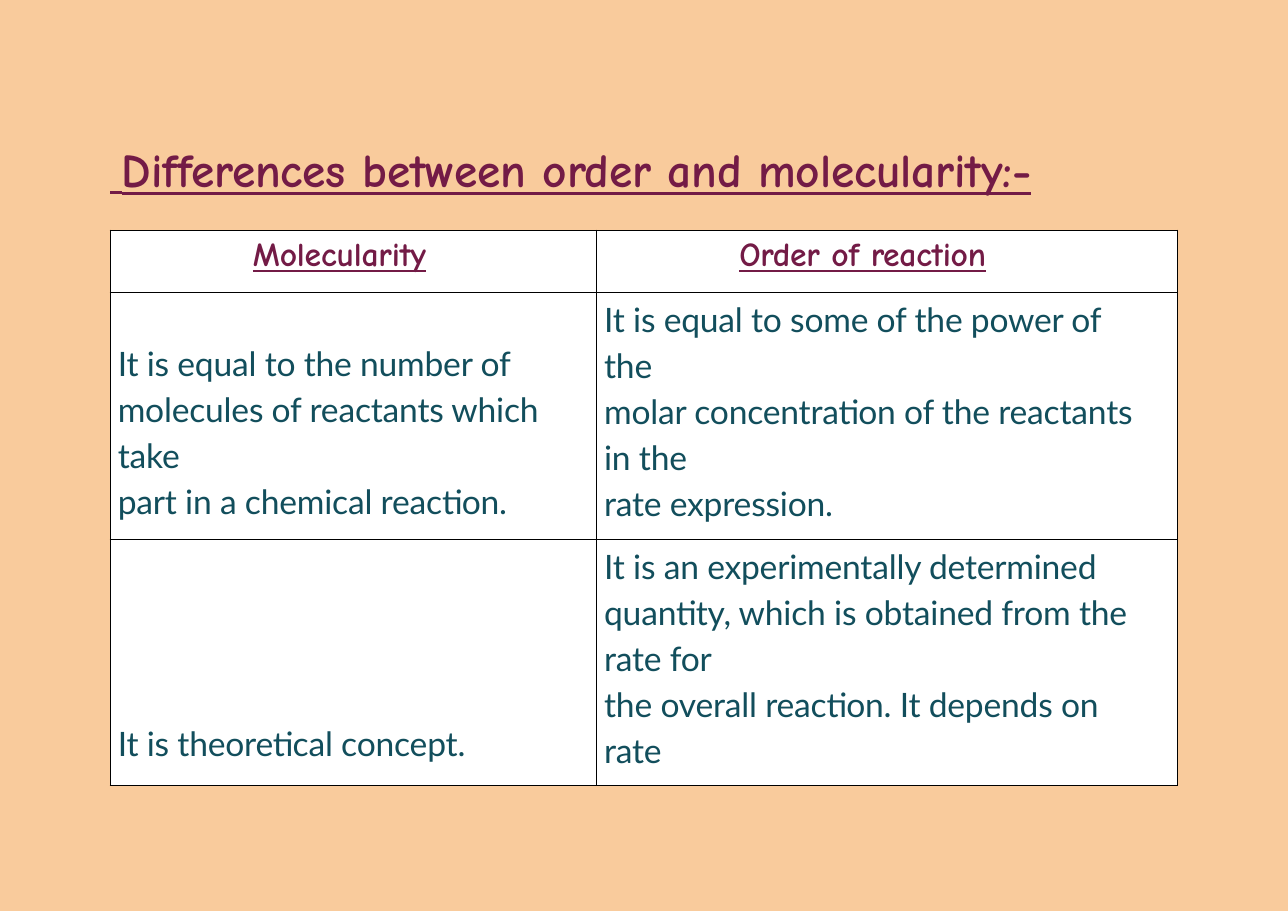
from lxml import etree
from pptx import Presentation
from pptx.dml.color import RGBColor
from pptx.enum.text import MSO_ANCHOR, MSO_AUTO_SIZE, PP_ALIGN
from pptx.oxml.ns import qn
from pptx.util import Cm, Pt

LEFT, TOP, FIXED = PP_ALIGN.LEFT, MSO_ANCHOR.TOP, MSO_AUTO_SIZE.NONE
COLORS = {"back": "F9CB9C", "head": "731B46", "body": "124E5C",
          "cell": "FFFFFF", "line": "000000"}
FORMATS = {
    "title": {"name": "Comic Neue", "size": Pt(31), "bold": True, "underline": True},
    "head": {"name": "Comic Neue", "size": Pt(22), "bold": True, "underline": True},
    "body": {"name": "Lato", "size": Pt(22), "bold": False, "underline": False},
}


class Deck:
    def __init__(self, width, height):
        self.prs = Presentation()
        self.prs.slide_width, self.prs.slide_height = Cm(width), Cm(height)
        self.slide = self.prs.slides.add_slide(self.prs.slide_layouts[5])
        self.paint(self.slide.background, "back")

    def paint(self, item, color):
        item.fill.solid()
        item.fill.fore_color.rgb = RGBColor.from_string(COLORS[color])

    def run(self, para, text, style, color, **extra):
        run = para.add_run()
        run.text = text
        for key, value in {**FORMATS[style], **extra}.items():
            setattr(run.font, key, value)
        run.font.color.rgb = RGBColor.from_string(COLORS[color])
        run.font._element.set("spc", "-10")

    def title(self, box, text):
        shape = self.slide.shapes.title
        for key, value in zip(("left", "top", "width", "height"), box):
            setattr(shape, key, Cm(value))
        frame = shape.text_frame
        values = {"margin_left": Cm(0.03), "margin_top": Cm(0.03), "margin_right": 0,
                  "margin_bottom": 0, "vertical_anchor": TOP,
                  "word_wrap": True, "auto_size": FIXED}
        for key, value in values.items():
            setattr(frame, key, value)
        para = frame.paragraphs[0]
        para.alignment = LEFT
        # The underline starts one space before the words
        self.run(para, " ", "title", "head", name="Times New Roman", bold=False)
        self.run(para, text, "title", "head")

    def border(self, cell):
        props = cell._tc.get_or_add_tcPr()
        for spot, side in enumerate(("lnL", "lnR", "lnT", "lnB")):
            line = etree.Element(qn(f"a:{side}"), w=str(Pt(0.75)))
            fill = etree.SubElement(line, qn("a:solidFill"))
            etree.SubElement(fill, qn("a:srgbClr"), val=COLORS["line"])
            props.insert(spot, line)

    def cell(self, cell, lines, style, margins, space):
        for side, value in zip(("left", "top", "right", "bottom"), margins):
            setattr(cell, f"margin_{side}", Cm(value))
        cell.vertical_anchor = TOP
        self.paint(cell, "cell")
        self.border(cell)
        frame = cell.text_frame
        for spot, text in enumerate(lines):
            para = frame.add_paragraph() if spot else frame.paragraphs[0]
            para.alignment, para.line_spacing = LEFT, space
            self.run(para, text, style, style)

    def table(self, left, top, widths, heights, rows, drops):
        table = self.slide.shapes.add_table(
            len(heights), len(widths), Cm(left), Cm(top),
            Cm(sum(widths)), Cm(sum(heights))).table
        for parts, key, sizes in ((table.columns, "width", widths),
                                  (table.rows, "height", heights)):
            for part, size in zip(parts, sizes):
                setattr(part, key, Cm(size))
        table.horz_banding = False
        for r, row in enumerate(rows):
            for c, lines in enumerate(row):
                style, inset, right, space = (
                    ("body", 0.18, 0.75, 1.14) if r else ("head", 3.3, 0, 1.0))
                self.cell(table.cell(r, c), lines, style,
                          (inset, drops[r][c], right, 0), space)


def main():
    deck = Deck(29.74, 21.03)

    # Heading
    deck.title((2.51, 3.2, 24.69, 1.37), "Differences between order and molecularity:-")

    # Comparison table: each cell is a list of paragraphs
    rows = [
        [["Molecularity"], ["Order of reaction"]],
        [["It is equal to the number of molecules of reactants which take",
          "part in a chemical reaction."],
         ["It is equal to some of the power of the",
          "molar concentration of the reactants in the",
          "rate expression."]],
        [["It is theoretical concept."],
         ["It is an experimentally determined quantity, which is obtained from the rate for",
          "the overall reaction. It depends on rate"]],
    ]
    # Top margin of each cell
    drops = [(0.15, 0.15), (1.04, 0.03), (4.11, 0.03)]
    deck.table(2.54, 5.31, (11.23, 13.41), (1.45, 5.69, 5.69), rows, drops)

    deck.prs.save("out.pptx")


if __name__ == "__main__":
    main()
